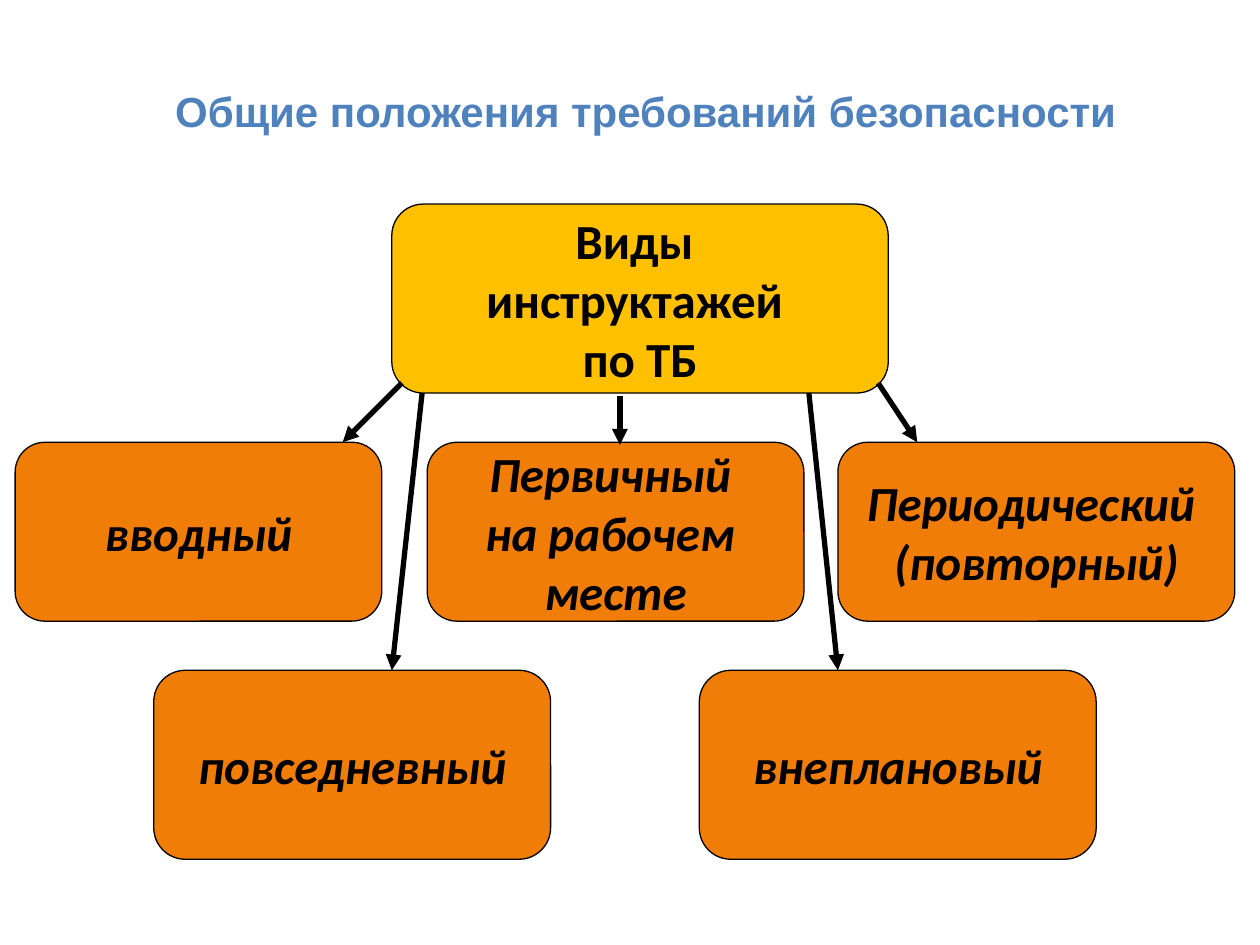
from lxml.etree import SubElement
from pptx import Presentation
from pptx.dml.color import RGBColor
from pptx.enum.shapes import MSO_CONNECTOR, MSO_SHAPE
from pptx.enum.text import MSO_ANCHOR, PP_ALIGN
from pptx.oxml import parse_xml
from pptx.oxml.ns import nsdecls, qn
from pptx.util import Inches, Pt

BLACK = RGBColor(0x00, 0x00, 0x00)
BLUE = RGBColor(0x4F, 0x81, 0xBD)
AMBER = RGBColor(0xFF, 0xC0, 0x00)
ORANGE = RGBColor(0xF1, 0x7D, 0x09)

TITLE_FONT = {"name": "Arial", "size": Pt(24), "bold": True}
ROOT_FONT = {"name": "Calibri", "size": Pt(28), "bold": True}
KIND_FONT = {**ROOT_FONT, "italic": True}

COLUMNS, ROWS = 100, 75

TEXT_SHADOW = (
    f'<a:effectLst {nsdecls("a")}>'
    '<a:outerShdw blurRad="38100" dist="38100" dir="2700000" algn="tl">'
    '<a:srgbClr val="000000"><a:alpha val="43000"/></a:srgbClr>'
    '</a:outerShdw></a:effectLst>'
)


class Diagram:
    """Holds the page and draws on a grid of 100 columns by 75 rows."""

    def __init__(self, deck):
        self.page = deck.slides.add_slide(deck.slide_layouts[6])
        self.column = deck.slide_width / COLUMNS
        self.row = deck.slide_height / ROWS

    def place(self, *lengths):
        units = (self.column, self.row) * 2
        return [round(length * unit) for length, unit in zip(lengths, units)]

    def set_text(self, shape, lines, font, color, wrap):
        frame = shape.text_frame
        frame.word_wrap = wrap
        frame.vertical_anchor = MSO_ANCHOR.MIDDLE
        for index, line in enumerate(lines):
            para = frame.add_paragraph() if index else frame.paragraphs[0]
            para.alignment = PP_ALIGN.CENTER
            span = para.add_run()
            span.text = line
            for key, value in font.items():
                setattr(span.font, key, value)
            span.font.color.rgb = color

    def title(self, area, text):
        box = self.page.shapes.add_textbox(*self.place(*area))
        self.set_text(box, [text], TITLE_FONT, BLUE, True)
        span = box.text_frame.paragraphs[0].runs[0]
        fill = span._r.rPr.find(qn("a:solidFill"))
        fill.addnext(parse_xml(TEXT_SHADOW))

    def block(self, area, lines, fill, font):
        box = self.page.shapes.add_shape(
            MSO_SHAPE.ROUNDED_RECTANGLE, *self.place(*area))
        box.shadow.inherit = False
        box.fill.solid()
        box.fill.fore_color.rgb = fill
        box.line.color.rgb = BLACK
        box.line.width = Pt(0.75)
        self.set_text(box, lines, font, BLACK, False)

    def arrow(self, *ends):
        arrow = self.page.shapes.add_connector(
            MSO_CONNECTOR.STRAIGHT, *self.place(*ends))
        arrow.line.color.rgb = BLACK
        arrow.line.width = Pt(3)
        properties = arrow._element.spPr
        SubElement(properties.find(qn("a:ln")), qn("a:tailEnd"), type="triangle")
        SubElement(properties, qn("a:effectLst"))


def main():
    deck = Presentation()
    deck.slide_width, deck.slide_height = Inches(10), Inches(7.5)
    diagram = Diagram(deck)

    # Heading and root of the tree
    diagram.title((7.5, 5.2, 87.5, 7.1), "Общие положения требований безопасности")
    diagram.block((31.1, 16.2, 39.4, 15),
                  ["Виды ", "инструктажей ", "по ТБ"], AMBER, ROOT_FONT)

    # Kinds of briefing: each row has a top, a height and its blocks
    upper, lower = 35.1, 53.2
    kinds = [
        (upper, 14.2, [
            (1.2, 29.1, ["вводный"]),
            (33.9, 29.9, ["Первичный ", "на рабочем ", "месте"]),
            (66.5, 31.5, ["Периодический ", "(повторный)"]),
        ]),
        (lower, 15, [
            (12.2, 31.5, ["повседневный"]),
            (55.5, 31.5, ["внеплановый"]),
        ]),
    ]
    for top, height, blocks in kinds:
        for left, width, lines in blocks:
            diagram.block((left, top, width, height), lines, ORANGE, KIND_FONT)

    # Arrows from the root to each kind
    for ends in [
        (31.9, 30.4, 27.2, upper),
        (49.2, 31.4, 49.2, upper + 0.2),
        (69.7, 30.4, 72.8, upper),
        (33.5, 31.2, 31.1, lower),
        (64.2, 31.2, 66.5, lower),
    ]:
        diagram.arrow(*ends)

    deck.save("out.pptx")


if __name__ == "__main__":
    main()
